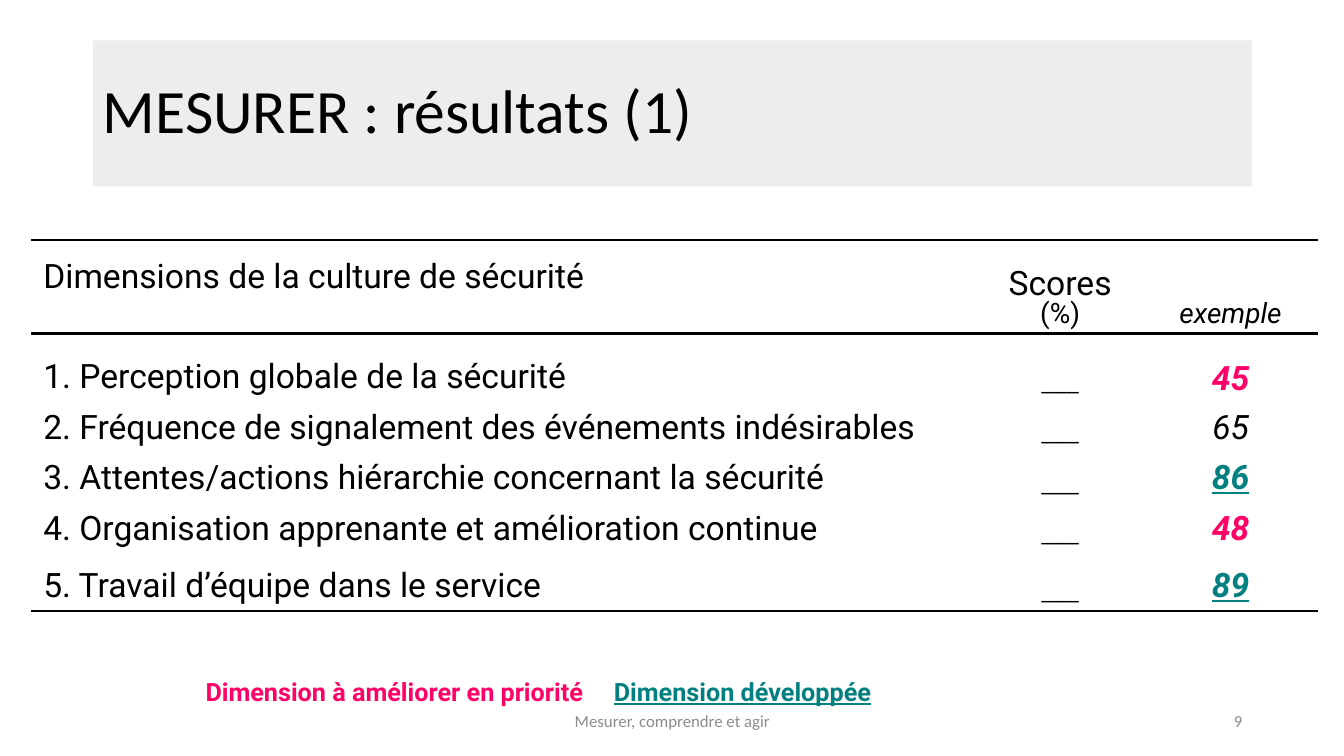
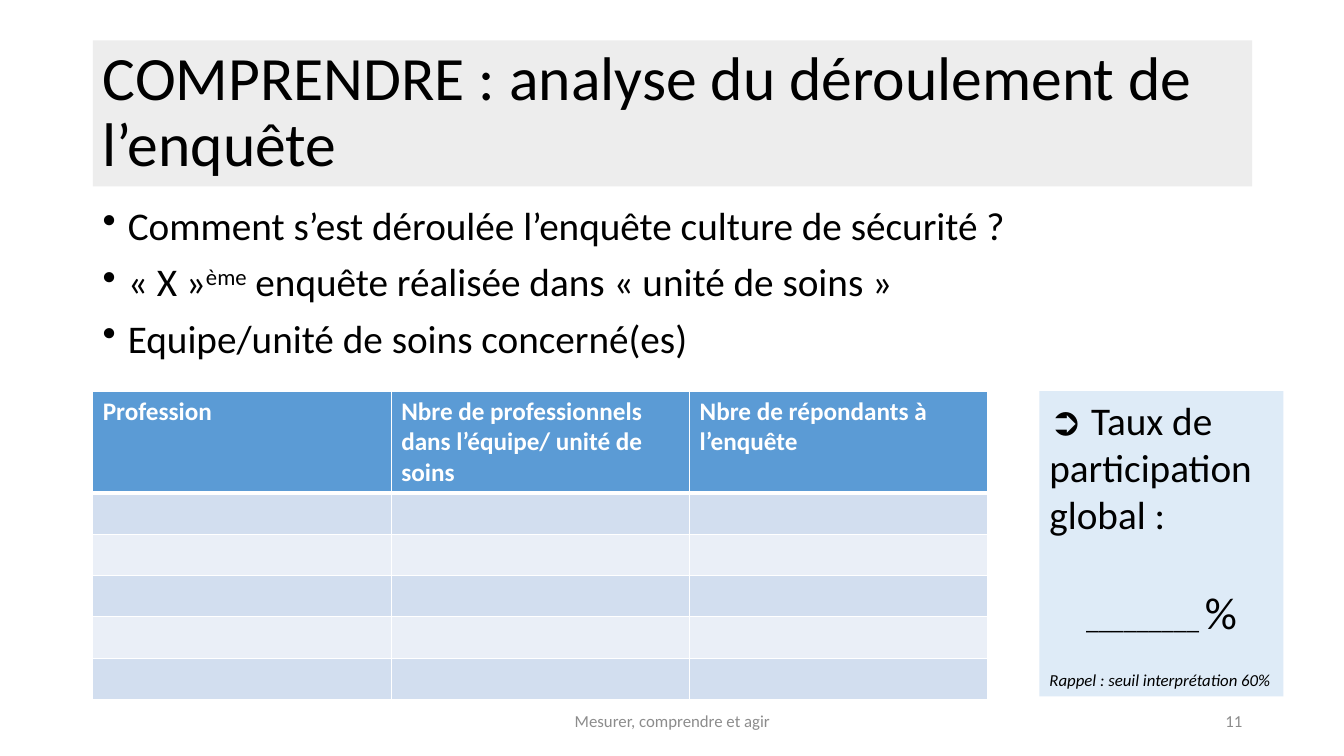
from dataclasses import dataclass

import pptx
import pptx.dml.color
import pptx.enum.shapes
import pptx.enum.text
import pptx.oxml.ns
import pptx.util
from lxml import etree

# Shared look
EMU_PER_PX = 9144  # 100 px to the inch
SLIDE_W, SLIDE_H = 1333, 750
TITLE_ONLY = 5
BODY_FONT, TABLE_FONT = "Calibri", "Roboto"
BLACK, WHITE, GREY = "000000", "FFFFFF", "8C8C8C"
TITLE_FILL, BOX_FILL = "EDEDED", "DEEBF7"
PINK, TEAL = "FF0066", "008080"
HEADER_FILL, BAND_FILLS = "5B9BD5", ("D2DEEF", "EAEFF7")
FOOTER = "Mesurer, comprendre et agir"

ALIGN = pptx.enum.text.PP_ALIGN
ANCHOR = pptx.enum.text.MSO_ANCHOR
CENTER = ALIGN.CENTER


@dataclass(frozen=True)
class Box:
    left: int
    top: int
    width: int
    height: int

    def emu(self) -> tuple:
        return px(self.left), px(self.top), px(self.width), px(self.height)


@dataclass(frozen=True)
class Run:
    text: str
    size: int = 24
    color: str = BLACK
    font: str = BODY_FONT
    bold: bool = False
    italic: bool = False
    underline: bool = False
    baseline: int = 0


@dataclass(frozen=True)
class Para:
    runs: tuple
    align: ALIGN = ALIGN.LEFT
    spacing: float = 1.0
    before: int = 0
    bullet: bool = False


@dataclass(frozen=True)
class Dimension:
    label: str
    score: str
    color: str = BLACK


TITLE_BOX = Box(92, 40, 1150, 145)
FOOTER_BOX = Box(442, 695, 450, 40)
NUMBER_BOX = Box(942, 695, 300, 40)


def px(n: int) -> int:
    return pptx.util.Emu(n * EMU_PER_PX)


def rgb(value: str) -> pptx.dml.color.RGBColor:
    return pptx.dml.color.RGBColor.from_string(value)


def fill(target, color: str) -> None:
    target.fill.solid()
    target.fill.fore_color.rgb = rgb(color)


# Text
def write_para(p, para: Para) -> None:
    p.alignment = para.align
    p.line_spacing = para.spacing
    p.space_before = pptx.util.Pt(para.before)
    if para.bullet:
        pPr = p._p.get_or_add_pPr()
        pPr.set("marL", str(px(25)))
        pPr.set("indent", str(-px(25)))
        etree.SubElement(pPr, pptx.oxml.ns.qn("a:buChar")).set("char", "•")
    for run in para.runs:
        r = p.add_run()
        r.text = run.text
        f = r.font
        f.name, f.size = run.font, pptx.util.Pt(run.size)
        f.bold, f.italic, f.underline = run.bold, run.italic, run.underline
        f.color.rgb = rgb(run.color)
        if run.baseline:
            r._r.get_or_add_rPr().set("baseline", str(run.baseline * 1000))


def write(tf, *paras: Para) -> None:
    for i, para in enumerate(paras):
        write_para(tf.add_paragraph() if i else tf.paragraphs[0], para)


def add_text(s, box: Box, *paras: Para, anchor=ANCHOR.TOP) -> None:
    tf = s.shapes.add_textbox(*box.emu()).text_frame
    tf.word_wrap = True
    tf.vertical_anchor = anchor
    write(tf, *paras)


# Tables
def set_border(cell, side: str, color: str = "", width: float = 1) -> None:
    """Draw one side (L, R, T or B); no colour means no line."""
    tcPr = cell._tc.get_or_add_tcPr()
    ln = etree.SubElement(tcPr, pptx.oxml.ns.qn(f"a:ln{side}"))
    if not color:
        etree.SubElement(ln, pptx.oxml.ns.qn("a:noFill"))
        return
    ln.set("w", str(int(pptx.util.Pt(width))))
    solid = etree.SubElement(ln, pptx.oxml.ns.qn("a:solidFill"))
    etree.SubElement(solid, pptx.oxml.ns.qn("a:srgbClr")).set("val", color)


def add_table(s, left: int, top: int, cols: list, rows: list):
    box = Box(left, top, sum(cols), sum(rows))
    table = s.shapes.add_table(len(rows), len(cols), *box.emu()).table
    table.first_row = table.horz_banding = False
    for column, width in zip(table.columns, cols):
        column.width = px(width)
    for row, height in zip(table.rows, rows):
        row.height = px(height)
    return table


# Frame common to all slides
def add_slide(prs, title: str, number: int):
    s = prs.slides.add_slide(prs.slide_layouts[TITLE_ONLY])
    sp = s.shapes.title
    sp.left, sp.top, sp.width, sp.height = TITLE_BOX.emu()
    fill(sp, TITLE_FILL)
    tf = sp.text_frame
    tf.word_wrap = True
    tf.auto_size = pptx.enum.text.MSO_AUTO_SIZE.NONE
    tf.vertical_anchor = ANCHOR.MIDDLE
    write(tf, Para((Run(title, 44),), spacing=0.9))
    for box, text, align in ((FOOTER_BOX, FOOTER, CENTER),
                             (NUMBER_BOX, str(number), ALIGN.RIGHT)):
        add_text(s, box, Para((Run(text, 12, GREY),), align),
                 anchor=ANCHOR.MIDDLE)
    return s


# Slide: scores by dimension
DIMENSIONS = [
    Dimension("1. Perception globale de la sécurité", "45", PINK),
    Dimension("2. Fréquence de signalement des événements indésirables", "65"),
    Dimension("3. Attentes/actions hiérarchie concernant la sécurité", "86", TEAL),
    Dimension("4. Organisation apprenante et amélioration continue", "48", PINK),
    Dimension("5. Travail d’équipe dans le service", "89", TEAL),
]


def dimension_cells(dim: Dimension, first: bool) -> list:
    score = Run(dim.score, 24, dim.color, TABLE_FONT, bold=dim.color != BLACK,
                italic=True, underline=dim.color == TEAL)
    return [
        [Para((Run(dim.label, font=TABLE_FONT),), spacing=1.4 if first else 1.0)],
        [Para((Run("___", 18),), CENTER)],
        [Para((score,), CENTER, 0.8 if first else 1.0)],
    ]


def build_results(prs) -> None:
    s = add_slide(prs, "MESURER : résultats (1)", 9)
    header = [
        [Para((Run("Dimensions de la culture de sécurité", font=TABLE_FONT),))],
        [Para((Run("Scores", font=TABLE_FONT),), CENTER, 0.8),
         Para((Run("(%)", 20, font=TABLE_FONT),), CENTER, 0.8)],
        [Para((Run("exemple", 20, font=TABLE_FONT, italic=True),), CENTER, 0.8)],
    ]
    content = [header] + [dimension_cells(dim, i == 0)
                          for i, dim in enumerate(DIMENSIONS)]
    table = add_table(s, 31, 238, [938, 165, 173], [93, 68, 49, 49, 49, 57])
    last = len(content) - 1
    for i, row in enumerate(content):
        for j, paras in enumerate(row):
            cell = table.cell(i, j)
            cell.vertical_anchor = ANCHOR.BOTTOM
            cell.margin_left = cell.margin_right = px(12)
            write(cell.text_frame, *paras)
            ruled = {"T": i in (0, 1), "B": i in (0, last)}
            for side in "LRTB":
                set_border(cell, side, BLACK if ruled.get(side) else "", 2.25)
            cell.fill.background()
    table.cell(0, 0).margin_bottom = px(37)  # raises the first heading

    # Colour key
    for left, text, color in ((194, "Dimension à améliorer en priorité", PINK),
                              (599, "Dimension développée", TEAL)):
        key = Run(text, 18, color, TABLE_FONT, bold=True, underline=color == TEAL)
        add_text(s, Box(left, 666, 400, 40), Para((key,)))


# Slide: how the survey went
def build_survey(prs) -> None:
    s = add_slide(prs, "COMPRENDRE : analyse du déroulement de l’enquête", 11)
    bullets = [
        (Run("Comment s’est déroulée l’enquête culture de sécurité ?", 28),),
        (Run("« X »", 28), Run("ème", 28, baseline=30),
         Run(" enquête réalisée dans « unité de soins »", 28)),
        (Run("Equipe/unité de soins concerné(es)", 28),),
    ]
    add_text(s, Box(92, 200, 1150, 180),
             *(Para(runs, spacing=0.9, before=10, bullet=True) for runs in bullets))

    # Respondents by profession
    headings = ["Profession", "Nbre de professionnels dans l’équipe/ unité de soins",
                "Nbre de répondants à l’enquête"]
    table = add_table(s, 92, 388, [296] * 3, [101] + [41] * 5)
    for i in range(len(table.rows)):
        for j, heading in enumerate(headings):
            cell = table.cell(i, j)
            for side in "LRTB":
                thick = (i, side) in ((0, "B"), (1, "T"))
                set_border(cell, side, WHITE, 3 if thick else 1)
            fill(cell, BAND_FILLS[(i - 1) % 2] if i else HEADER_FILL)
            if i == 0:
                write(cell.text_frame, Para((Run(heading, 18, WHITE, bold=True),)))

    # Participation rate
    sp = s.shapes.add_shape(pptx.enum.shapes.MSO_SHAPE.RECTANGLE,
                            *Box(1031, 388, 242, 303).emu())
    sp.shadow.inherit = False
    fill(sp, BOX_FILL)
    sp.line.fill.background()
    tf = sp.text_frame
    tf.word_wrap = True
    tf.vertical_anchor = ANCHOR.TOP
    write(tf,
          Para((Run("➲ Taux de participation global :", 28),)),
          Para((Run("_________ ", 18), Run("%", 32)), CENTER, before=34),
          Para((Run("Rappel : seuil interprétation 60%", 12, italic=True),),
               before=22))


def main() -> None:
    prs = pptx.Presentation()
    prs.slide_width, prs.slide_height = px(SLIDE_W), px(SLIDE_H)
    build_results(prs)
    build_survey(prs)
    prs.save("out.pptx")


if __name__ == "__main__":
    main()
